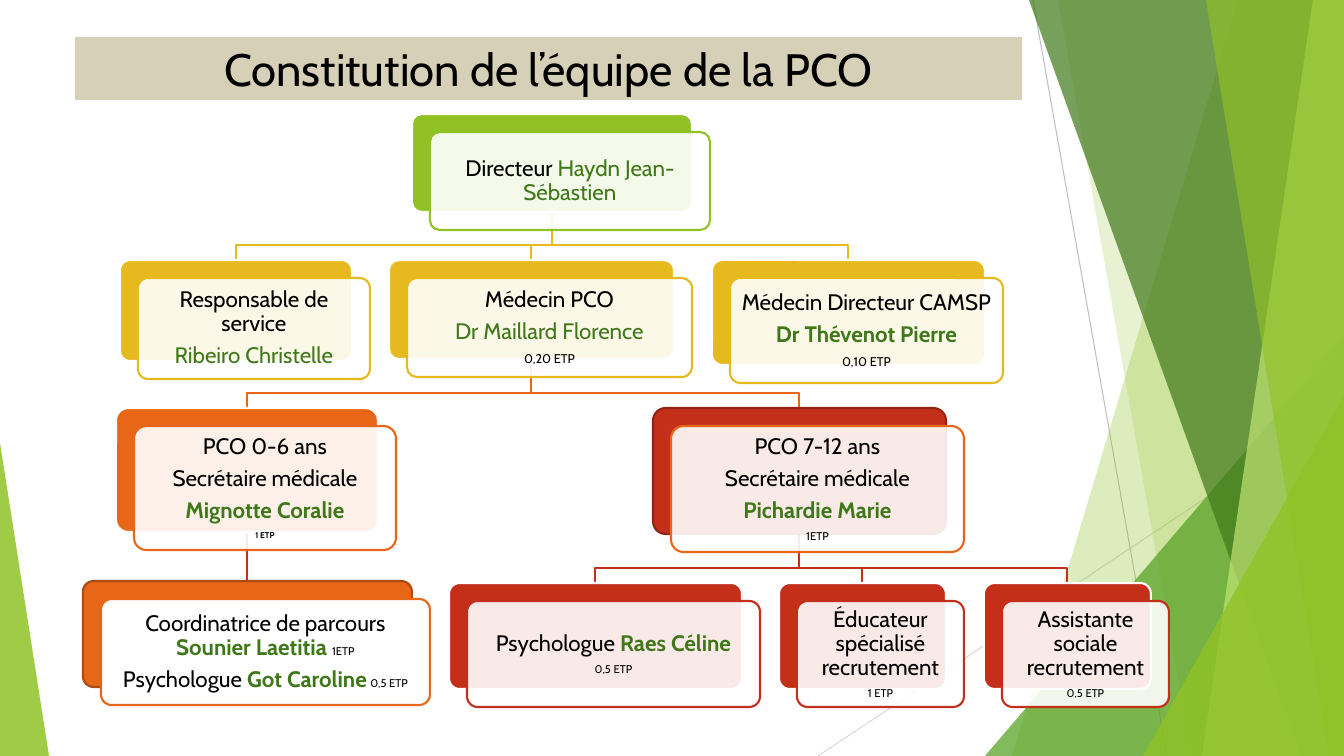
"""Build the slide showing the organisation chart of the PCO team."""
from lxml import etree
from pptx import Presentation
from pptx.dml.color import RGBColor
from pptx.enum.shapes import MSO_CONNECTOR, MSO_SHAPE
from pptx.enum.text import MSO_ANCHOR, PP_ALIGN
from pptx.oxml.ns import qn
from pptx.util import Pt

ROUNDED, TRIANGLE = MSO_SHAPE.ROUNDED_RECTANGLE, MSO_SHAPE.ISOSCELES_TRIANGLE
STRAIGHT = MSO_CONNECTOR.STRAIGHT
CENTER, MIDDLE = PP_ALIGN.CENTER, MSO_ANCHOR.MIDDLE

W, H = 1344, 756
PX = 914400 / 100.8
FONT = "Cabin"
OFFSET, INSET, BUS_GAP = 18, 7, 15

C = {
    "black": "000000", "white": "FFFFFF", "title": "D6D0B8", "lime": "90C226",
    "pale": "C0E474", "green": "54A021", "dark": "3F7819", "yellow": "E6B91E",
    "orange": "E76618", "brown": "AB4B12", "red": "C42F1A", "maroon": "912313",
    "grey": "BFBFBF", "light": "D9D9D9",
}

TITLE = "Constitution de l’équipe de la PCO"
TITLE_BOX = (75, 37, 947, 63)

THIN_LINES = [((1033, 0), (1167, H), "grey"), ((W, 406), (818, H), "light")]
BANDS = [
    ("quad", (1238, 1012), "lime", 30),
    ("quad", (1058, 1192), "lime", 20),
    ("triangle", (985, 336, 359, 420, 1), "green", 72),
    ("quad", (1029, 1301), "dark", 70),
    ("quad", (1313, 1202), "pale", 70),
    ("quad", (1206, 1329), "lime", 65),
    ("triangle", (1143, 396, 201, 360, 1), "lime", 80),
    ("triangle", (0, 443, 49, 313, 0), "lime", 85),
]


def role(text):
    return text, "black", False, 16


def name(text, bold=True, size=16):
    return text, "dark", bold, size


def etp(text, size=8, bold=False):
    return text, "black", bold, size


# key: box, back fill, back line, front line, front opacity, paragraphs
BOXES = {
    "directeur": ((412, 114, 280, 98), "lime", "white", "lime", 90, [
        [role("Directeur "), name("Haydn Jean-Sébastien", False)]]),
    "responsable": ((120, 260, 232, 101), "yellow", "white", "yellow", 90, [
        [role("Responsable de service")], [name("Ribeiro Christelle", False)]]),
    "médecin": ((389, 260, 285, 99), "yellow", "white", "yellow", 90, [
        [role("Médecin PCO")], [name("Dr Maillard Florence", False)],
        [etp("0,20 ETP", 9)]]),
    "pco 0-6": ((116, 408, 262, 124), "orange", "white", "orange", 90, [
        [role("PCO 0-6 ans")], [role("Secrétaire médicale")],
        [name("Mignotte Coralie")], [etp("1 ETP", 6, True)]]),
    "coordinatrice": ((83, 581, 329, 106), "orange", "brown", "orange", 100, [
        [role("Coordinatrice de parcours "), name("Sounier Laetitia "), etp("1ETP")],
        [role("Psychologue "), name("Got Caroline"), name(" ", size=11),
         etp("0,5 ETP")]]),
    "pco 7-12": ((653, 408, 293, 126), "red", "maroon", "orange", 90, [
        [role("PCO 7-12 ans")], [role("Secrétaire médicale")],
        [name("Pichardie Marie")], [etp("1ETP")]]),
    "psychologue": ((449, 583, 293, 106), "red", "white", "red", 90, [
        [role("Psychologue "), name("Raes Céline")], [etp("0,5 ETP")]]),
    "éducateur": ((779, 583, 167, 106), "red", "white", "red", 90, [
        [role("Éducateur spécialisé recrutement")], [etp("1 ETP")]]),
    "assistante": ((984, 583, 167, 106), "red", "white", "red", 90, [
        [role("Assistante sociale recrutement")], [etp("0,5 ETP")]]),
    "camsp": ((712, 260, 273, 105), "yellow", "white", "yellow", 90, [
        [role("Médecin Directeur CAMSP")], [name("Dr Thévenot Pierre")],
        [etp("0,10 ETP", 9)]]),
}
LINKS = [
    ("directeur", ["camsp", "médecin", "responsable"], "yellow"),
    ("médecin", ["pco 7-12", "pco 0-6"], "orange"),
    ("pco 7-12", ["assistante", "éducateur", "psychologue"], "red"),
    ("pco 0-6", ["coordinatrice"], "red"),
]


def rgb(color):
    return RGBColor.from_string(C[color])


def emu(*lengths):
    return [round(v * PX) for v in lengths]


def paint(sp, fill=None, opacity=100, line=None):
    sp.shadow.inherit = False
    if fill:
        sp.fill.solid()
        sp.fill.fore_color.rgb = rgb(fill)
        if opacity < 100:
            clr = sp._element.spPr.find(qn("a:solidFill"))[0]
            etree.SubElement(clr, qn("a:alpha"), val=str(opacity * 1000))
    else:
        sp.fill.background()
    if line:
        sp.line.color.rgb = rgb(line)
        sp.line.width = Pt(1.5)
    else:
        sp.line.fill.background()


def add_line(shapes, start, end, color, width):
    cx = shapes.add_connector(STRAIGHT, *emu(*start, *end))
    cx.line.color.rgb = rgb(color)
    cx.line.width = Pt(width)
    etree.SubElement(cx._element.spPr, qn("a:effectLst"))


def add_path(shapes, points, close):
    fb = shapes.build_freeform(*points[0], scale=PX)
    fb.add_line_segments(points[1:], close=close)
    return fb.convert_to_shape()


def add_band(shapes, kind, geometry, color, opacity):
    if kind == "quad":
        top, bottom = geometry
        sp = add_path(shapes, [(top, 0), (W, 0), (W, H), (bottom, H)], True)
    else:
        *box, apex = geometry
        sp = shapes.add_shape(TRIANGLE, *emu(*box))
        sp.adjustments[0] = apex
    paint(sp, color, opacity)


def add_link(shapes, parent, child, color):
    (px, py, pw, ph), (cx, cy, cw, _) = BOXES[parent][0], BOXES[child][0]
    x1, y1, x2 = px + pw // 2, py + ph, cx + cw // 2
    if x1 == x2:
        add_line(shapes, (x1, y1), (x2, cy), color, 1.5)
    else:
        bus = cy - BUS_GAP
        sp = add_path(shapes, [(x1, y1), (x1, bus), (x2, bus), (x2, cy)], False)
        paint(sp, line=color)


def add_run(p, text, color, bold, size):
    r = p.add_run()
    r.text = text
    r.font.name, r.font.size, r.font.bold = FONT, Pt(size), bold
    r.font.color.rgb = rgb(color)


def add_box(shapes, box, fill, back_line, front_line, opacity, paragraphs):
    x, y, w, h = box
    back = shapes.add_shape(ROUNDED, *emu(*box))
    front = shapes.add_shape(ROUNDED, *emu(x + OFFSET, y + OFFSET, w, h))
    back.adjustments[0] = front.adjustments[0] = 0.1
    paint(back, fill, line=back_line)
    paint(front, "white", opacity, front_line)
    tf = front.text_frame
    tf.word_wrap, tf.vertical_anchor = True, MIDDLE
    tf.margin_left, tf.margin_top, tf.margin_right, tf.margin_bottom = emu(*[INSET] * 4)
    for i, runs in enumerate(paragraphs):
        p = tf.add_paragraph() if i else tf.paragraphs[0]
        p.alignment, p.line_spacing = CENTER, 0.9
        p.space_after = Pt(0.35 * runs[0][3])
        for run in runs:
            add_run(p, *run)


def add_title(sp):
    sp.left, sp.top, sp.width, sp.height = emu(*TITLE_BOX)
    sp.fill.solid()
    sp.fill.fore_color.rgb = rgb("title")
    tf = sp.text_frame
    tf.word_wrap, tf.vertical_anchor = True, MIDDLE
    p = tf.paragraphs[0]
    p.alignment = CENTER
    add_run(p, TITLE, "black", False, 32.4)


def main():
    prs = Presentation()
    prs.slide_width, prs.slide_height = emu(W, H)
    shapes = prs.slides.add_slide(prs.slide_layouts[5]).shapes
    add_title(shapes.title)
    for start, end, color in THIN_LINES:
        add_line(shapes, start, end, color, 0.75)
    for band in BANDS:
        add_band(shapes, *band)
    for parent, children, color in LINKS:
        for child in children:
            add_link(shapes, parent, child, color)
    for box in BOXES.values():
        add_box(shapes, *box)
    prs.save("out.pptx")


if __name__ == "__main__":
    main()
